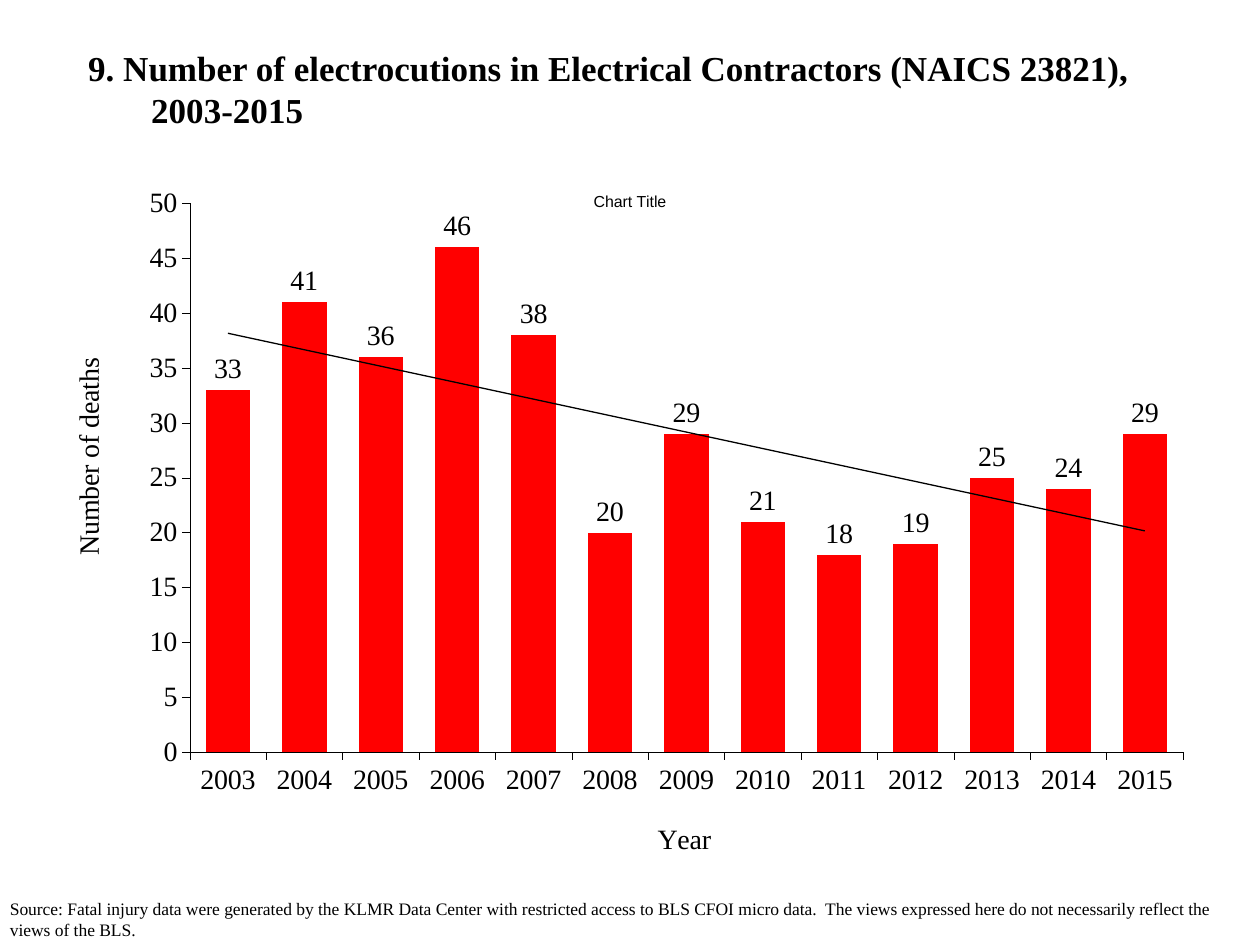
from lxml import etree
from pptx import Presentation
from pptx.chart.data import CategoryChartData
from pptx.dml.color import RGBColor
from pptx.enum.chart import XL_CHART_TYPE, XL_LABEL_POSITION, XL_TICK_MARK
from pptx.enum.text import MSO_ANCHOR, PP_ALIGN
from pptx.oxml import parse_xml
from pptx.oxml.ns import nsdecls, qn
from pptx.util import Inches, Pt

BLACK = RGBColor(0, 0, 0)
RED = RGBColor(255, 0, 0)
SERIF = "Times New Roman"
COLUMNS = XL_CHART_TYPE.COLUMN_CLUSTERED
OUTSIDE_END = XL_LABEL_POSITION.OUTSIDE_END
TICK_OUT, TICK_NONE = XL_TICK_MARK.OUTSIDE, XL_TICK_MARK.NONE
MIDDLE, LEFT = MSO_ANCHOR.MIDDLE, PP_ALIGN.LEFT

DEATHS = [33, 41, 36, 46, 38, 20, 29, 21, 18, 19, 25, 24, 29]
FIRST_YEAR = 2003


def set_values(target, **values):
    for name, value in values.items():
        setattr(target, name, value)


def format_font(font, size, name=SERIF, bold=False):
    set_values(font, size=Pt(size), name=name, bold=bold)
    font.color.rgb = BLACK


def place(shape, left, top, width, height):
    set_values(shape, left=Inches(left), top=Inches(top),
               width=Inches(width), height=Inches(height))


def set_layout(parent, index, **fractions):
    """Place a chart part by fractions of the chart's size."""
    for old in parent.findall(qn("c:layout")):
        parent.remove(old)
    layout = parse_xml(f"<c:layout {nsdecls('c')}><c:manualLayout/></c:layout>")
    settings = {"xMode": "edge", "yMode": "edge", **fractions}
    if "w" in fractions:
        settings = {"layoutTarget": "inner", **settings}
    for name, value in settings.items():
        etree.SubElement(layout[0], qn(f"c:{name}"), val=str(value))
    parent.insert(index, layout)


def add_title(page, text):
    title = page.shapes.title
    place(title, 0.6, 0.33, 8.8, 0.75)
    title.text_frame.vertical_anchor = MIDDLE
    para = title.text_frame.paragraphs[0]
    para.alignment = LEFT
    properties = para._p.get_or_add_pPr()
    properties.set("marL", str(Inches(0.5)))
    properties.set("indent", str(Inches(-0.5)))
    span = para.add_run()
    span.text = text
    format_font(span.font, 20, bold=True)


def add_source(page, text):
    box = page.shapes.add_textbox(Inches(-0.02), Inches(7.08), Inches(10), Inches(0.44))
    box.text_frame.word_wrap = True
    para = box.text_frame.paragraphs[0]
    para.space_before = Pt(3.5)
    span = para.add_run()
    span.text = text
    format_font(span.font, 10)


def set_title(owner, text, size, name=SERIF):
    """Give a chart or an axis its title and return the title's XML element."""
    title = owner.chart_title if hasattr(owner, "chart_title") else owner.axis_title
    title.text_frame.text = text
    format_font(title.text_frame.paragraphs[0].runs[0].font, size, name)
    return title._element


def format_axis(axis, title, x, y):
    set_values(axis, has_major_gridlines=False,
               major_tick_mark=TICK_OUT, minor_tick_mark=TICK_NONE)
    format_font(axis.tick_labels.font, 16)
    axis.format.line.color.rgb = BLACK
    axis.format.line.width = Pt(0.19)
    set_layout(set_title(axis, title, 16), 1, x=x, y=y)


def add_trendline(series):
    trendline = parse_xml(
        f"<c:trendline {nsdecls('c', 'a')}><c:spPr><a:ln w=\"{Pt(0.75)}\"><a:solidFill>"
        f"<a:srgbClr val=\"{BLACK}\"/></a:solidFill></a:ln></c:spPr>"
        "<c:trendlineType val=\"linear\"/><c:dispRSqr val=\"0\"/>"
        "<c:dispEq val=\"0\"/></c:trendline>")
    series._element.find(qn("c:cat")).addprevious(trendline)


def add_deaths_chart(page):
    data = CategoryChartData()
    data.categories = [str(FIRST_YEAR + step) for step in range(len(DEATHS))]
    data.add_series("Series 1", DEATHS)
    chart = page.shapes.add_chart(COLUMNS, Inches(0.52), Inches(1.33),
                                  Inches(8.96), Inches(5.66), data).chart
    chart.has_legend = False
    format_font(chart.font, 7.6, "Arial")
    set_title(chart, "Chart Title", 9.1, "Arial")

    format_axis(chart.category_axis, "Year", 0.52, 0.91)
    format_axis(chart.value_axis, "Number of deaths", 0, 0.26)
    set_values(chart.value_axis, minimum_scale=0, maximum_scale=50, major_unit=5)
    set_values(chart.value_axis.tick_labels, number_format="#,##0",
               number_format_is_linked=False)

    plot = chart.plots[0]
    set_values(plot, gap_width=72, vary_by_categories=False)
    series = plot.series[0]
    series.format.fill.solid()
    series.format.fill.fore_color.rgb = RED
    labels = series.data_labels
    set_values(labels, show_value=True, position=OUTSIDE_END)
    format_font(labels.font, 16)
    add_trendline(series)
    plot_area = chart._chartSpace.find(".//" + qn("c:plotArea"))
    set_layout(plot_area, 0, x=0.11, y=0.05, w=0.88, h=0.77)


def main():
    deck = Presentation()
    set_values(deck, slide_width=Inches(10), slide_height=Inches(7.5))
    page = deck.slides.add_slide(deck.slide_layouts[5])
    add_title(page, "9. Number of electrocutions in Electrical Contractors "
                    "(NAICS 23821), 2003-2015")
    add_deaths_chart(page)
    add_source(page, "Source: Fatal injury data were generated by the KLMR Data Center "
                     "with restricted access to BLS CFOI micro data.  The views expressed "
                     "here do not necessarily reflect the views of the BLS.")
    deck.save("out.pptx")


if __name__ == "__main__":
    main()
